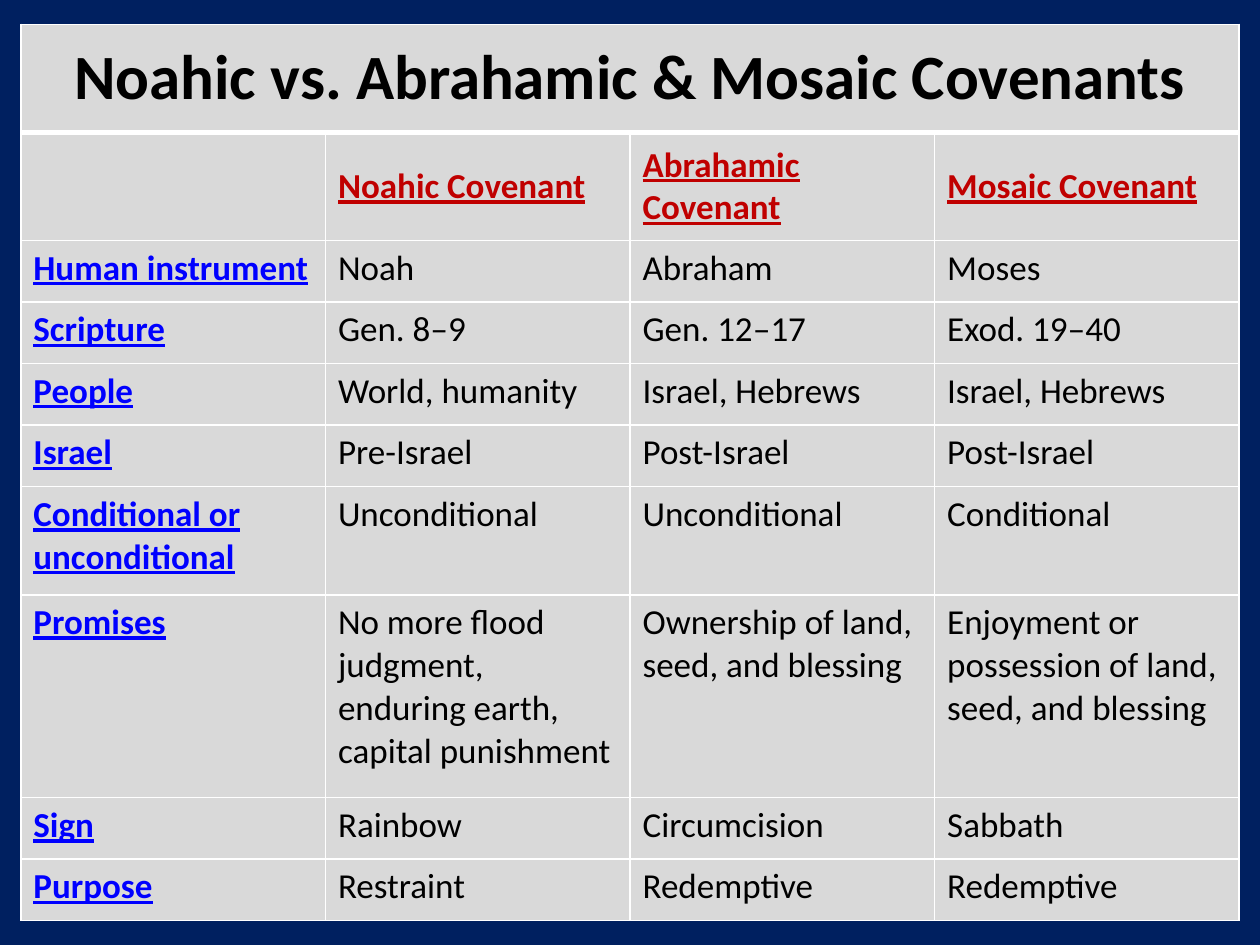
import pptx
import pptx.dml.color
import pptx.enum.text
import pptx.oxml.ns
import pptx.util
from lxml import etree
from pptx.util import Cm

RGBColor = pptx.dml.color.RGBColor
NAVY = RGBColor(0x00, 0x20, 0x60)
LIGHT_GREY = RGBColor(0xD9, 0xD9, 0xD9)
WHITE = RGBColor(0xFF, 0xFF, 0xFF)
BLACK = RGBColor(0x00, 0x00, 0x00)
RED = RGBColor(0xC0, 0x00, 0x00)
BLUE = RGBColor(0x00, 0x00, 0xFF)

FONT = "Calibri"
TITLE = "Noahic vs. Abrahamic & Mosaic Covenants"
COVENANTS = ["", "Noahic Covenant", "Abrahamic Covenant", "Mosaic Covenant"]
COMPARISON = [
    ["Human instrument", "Noah", "Abraham", "Moses"],
    ["Scripture", "Gen. 8‒9", "Gen. 12‒17", "Exod. 19‒40"],
    ["People", "World, humanity", "Israel, Hebrews", "Israel, Hebrews"],
    ["Israel", "Pre-Israel", "Post-Israel", "Post-Israel"],
    ["Conditional or unconditional", "Unconditional", "Unconditional", "Conditional"],
    ["Promises", "No more flood judgment, enduring earth, capital punishment",
     "Ownership of land, seed, and blessing",
     "Enjoyment or possession of land, seed, and blessing"],
    ["Sign", "Rainbow", "Circumcision", "Sabbath"],
    ["Purpose", "Restraint", "Redemptive", "Redemptive"],
]
ONE_LINE, TWO_LINES, FOUR_LINES = 1.24, 2.18, 4.09
ROW_HEIGHTS = [TWO_LINES] * 2 + [ONE_LINE] * 4 + [TWO_LINES, FOUR_LINES] + [ONE_LINE] * 2


def set_borders(cell, top=1, bottom=1):
    """Draw white cell borders; widths are in points. Call before filling the cell."""
    properties = cell._tc.get_or_add_tcPr()
    qualified = pptx.oxml.ns.qn
    for tag, width in (("a:lnL", 1), ("a:lnR", 1), ("a:lnT", top), ("a:lnB", bottom)):
        line = etree.SubElement(properties, qualified(tag), w=str(pptx.util.Pt(width)))
        fill = etree.SubElement(line, qualified("a:solidFill"))
        etree.SubElement(fill, qualified("a:srgbClr"), val=str(WHITE))


def write_cell(cell, text, color, size=20, bold=False, underline=False):
    if not text:
        return
    run = cell.text_frame.paragraphs[0].add_run()
    run.text = text
    run.font.name = FONT
    run.font.size = pptx.util.Pt(size)
    run.font.bold = bold
    run.font.underline = underline
    run.font.color.rgb = color


def add_covenant_table(slide, left, top, width):
    row_count, column_count = len(ROW_HEIGHTS), len(COVENANTS)
    shape = slide.shapes.add_table(row_count, column_count, Cm(left), Cm(top),
                                   Cm(width), Cm(sum(ROW_HEIGHTS)))
    table = shape.table
    table.horz_banding = False
    for column in table.columns:
        column.width = Cm(width / column_count)
    for row, height in zip(table.rows, ROW_HEIGHTS):
        row.height = Cm(height)

    for row_index, row in enumerate(table.rows):
        for cell in row.cells:
            set_borders(cell, top=3 if row_index == 1 else 1,
                        bottom=3 if row_index == 0 else 1)
            cell.fill.solid()
            cell.fill.fore_color.rgb = LIGHT_GREY
            if row_index < 2:
                cell.vertical_anchor = pptx.enum.text.MSO_ANCHOR.MIDDLE

    title_cell = table.cell(0, 0)
    title_cell.merge(table.cell(0, column_count - 1))
    write_cell(title_cell, TITLE, BLACK, size=36, bold=True)
    title_cell.text_frame.paragraphs[0].alignment = pptx.enum.text.PP_ALIGN.CENTER

    for column_index, covenant in enumerate(COVENANTS):
        write_cell(table.cell(1, column_index), covenant, RED, bold=True, underline=True)
    for row_index, (topic, *answers) in enumerate(COMPARISON, start=2):
        write_cell(table.cell(row_index, 0), topic, BLUE, bold=True, underline=True)
        for column_index, answer in enumerate(answers, start=1):
            write_cell(table.cell(row_index, column_index), answer, BLACK)


def main():
    presentation = pptx.Presentation()
    presentation.slide_width = Cm(25.4)
    presentation.slide_height = Cm(19.05)
    slide = presentation.slides.add_slide(presentation.slide_layouts[6])
    slide.background.fill.solid()
    slide.background.fill.fore_color.rgb = NAVY
    add_covenant_table(slide, left=0.42, top=0.49, width=24.56)
    presentation.save("out.pptx")


if __name__ == "__main__":
    main()
